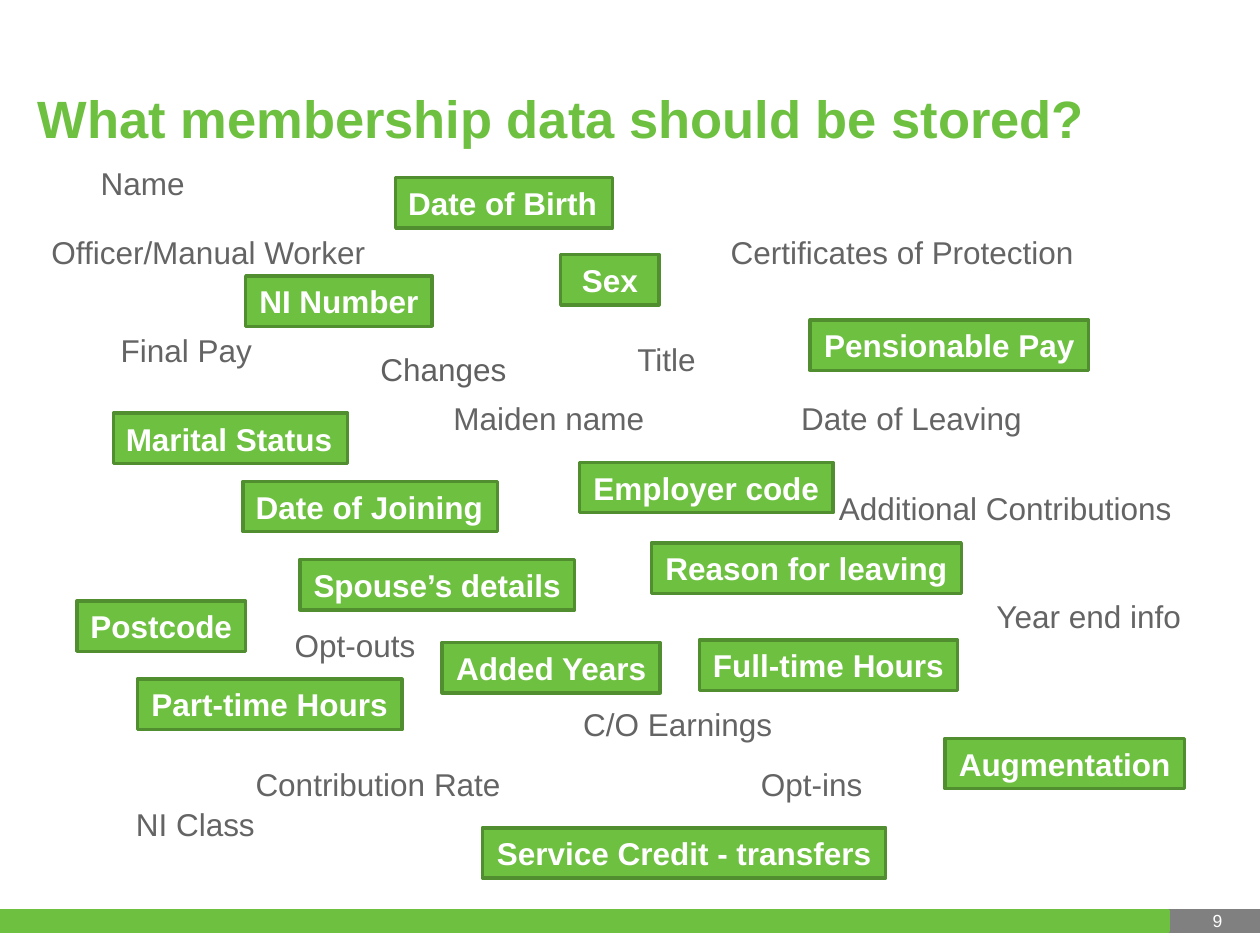
from pptx import Presentation
from pptx.dml.color import RGBColor
from pptx.enum import shapes, text
from pptx.util import Inches, Pt

GREEN, DARK_GREEN, GREY, BAR_GREY, WHITE = "6EC040", "518E2F", "646464", "808080", "FFFFFF"
CHANGES_GREY = "606060"
ROW_HEIGHT = 0.4
LEFT, CENTER, RIGHT = text.PP_ALIGN.LEFT, text.PP_ALIGN.CENTER, text.PP_ALIGN.RIGHT

PLAIN_ITEMS = [
    ("Name", 0.7, 1.25, 0.88),
    ("Officer/Manual Worker", 0.31, 1.8, 2.72),
    ("Certificates of Protection", 5.7, 1.8, 2.95),
    ("Final Pay", 0.86, 2.58, 1.25),
    ("Title", 4.96, 2.65, 0.67),
    ("Changes", 2.92, 2.73, 1.21),
    ("Maiden name", 3.5, 3.12, 1.73),
    ("Date of Leaving", 6.26, 3.12, 1.97),
    ("Additional Contributions", 6.56, 3.83, 3.05),
    ("Year end info", 7.81, 4.69, 1.68),
    ("Opt-outs", 2.24, 4.92, 1.17),
    ("C/O Earnings", 4.53, 5.55, 1.72),
    ("Contribution Rate", 1.93, 6.02, 2.16),
    ("Opt-ins", 5.94, 6.02, 1.02),
    ("NI Class", 0.98, 6.34, 1.16),
]
HIGHLIGHTED_ITEMS = [
    ("Date of Birth", 3.14, 1.41, 1.72),
    ("Sex", 4.45, 2.02, 0.78),
    ("NI Number", 1.95, 2.19, 1.48),
    ("Pensionable Pay", 6.43, 2.54, 2.21),
    ("Marital Status", 0.9, 3.28, 1.86),
    ("Employer code", 4.6, 3.67, 2.01),
    ("Date of Joining", 1.93, 3.82, 2.02),
    ("Reason for leaving", 5.17, 4.31, 2.46),
    ("Spouse’s details", 2.38, 4.44, 2.18),
    ("Postcode", 0.61, 4.77, 1.34),
    ("Full-time Hours", 5.55, 5.08, 2.05),
    ("Added Years", 3.51, 5.1, 1.73),
    ("Part-time Hours", 1.09, 5.39, 2.1),
    ("Augmentation", 7.5, 5.86, 1.9),
    ("Service Credit - transfers", 3.83, 6.57, 3.2),
]
LEFT_ALIGNED = {"Date of Birth", "Date of Joining", "Marital Status"}
WRAPPED = {"Sex", "Additional Contributions"}


def rgb(value):
    """Turn a hex string into a colour."""
    return RGBColor.from_string(value)


def inches(*box):
    """Turn box numbers into lengths."""
    return [Inches(length) for length in box]


def write(shape, wording, size, color, bold=False, align=LEFT):
    """Put one formatted paragraph into a shape."""
    paragraph = shape.text_frame.paragraphs[0]
    paragraph.text = wording
    paragraph.alignment = align
    font = paragraph.font
    font.name, font.size, font.bold = "Arial", Pt(size), bold
    font.color.rgb = rgb(color)


def add_bar(slide, box, fill, line):
    """Draw a flat outlined rectangle."""
    bar = slide.shapes.add_shape(shapes.MSO_SHAPE.RECTANGLE, *inches(*box))
    bar.shadow.inherit = False
    bar.fill.solid()
    bar.fill.fore_color.rgb = rgb(fill)
    bar.line.color.rgb = rgb(line)
    bar.line.width = Pt(2)
    return bar


def add_footer(slide, left, top, width, height):
    """Draw the footer band with the slide number."""
    number_width = 0.83
    add_bar(slide, (left + width - number_width, top, number_width, height), BAR_GREY, BAR_GREY)
    add_bar(slide, (left, top, width - 0.73, height), GREEN, GREEN)
    number = slide.shapes.add_textbox(*inches(left + width - 0.84, top - 0.38, 0.64, 0.59))
    number.text_frame.word_wrap = True
    number.text_frame.vertical_anchor = text.MSO_ANCHOR.BOTTOM
    write(number, "9", 10, WHITE, align=RIGHT)


def add_title(slide, left, top, width, height):
    """Place the slide title."""
    title = slide.shapes.title
    title.left, title.top, title.width, title.height = inches(left, top, width, height)
    title.text_frame.vertical_anchor = text.MSO_ANCHOR.TOP
    title.text_frame.auto_size = text.MSO_AUTO_SIZE.SHAPE_TO_FIT_TEXT
    write(title, "What membership data should be stored?", 30, GREEN, bold=True)


def add_item(slide, wording, left, top, width, highlighted):
    """Place one data item, boxed in green when highlighted."""
    box = (left, top, width, ROW_HEIGHT)
    if highlighted:
        item = add_bar(slide, box, GREEN, DARK_GREEN)
        align = LEFT if wording in LEFT_ALIGNED else CENTER
        color = WHITE
    else:
        item = slide.shapes.add_textbox(*inches(*box))
        align = LEFT
        color = CHANGES_GREY if wording == "Changes" else GREY
    item.text_frame.word_wrap = wording in WRAPPED
    item.text_frame.auto_size = text.MSO_AUTO_SIZE.SHAPE_TO_FIT_TEXT
    write(item, wording, 18, color, highlighted, align)


def main():
    """Build and save the slide."""
    deck = Presentation()
    deck.slide_width, deck.slide_height = inches(10, 7.5)
    slide = deck.slides.add_slide(deck.slide_layouts[5])
    add_footer(slide, 0, 7.23, 10, 0.16)
    add_title(slide, 0.2, 0.63, 8.93, 0.61)
    for items, highlighted in ((PLAIN_ITEMS, False), (HIGHLIGHTED_ITEMS, True)):
        for item in items:
            add_item(slide, *item, highlighted)
    deck.save("out.pptx")


if __name__ == "__main__":
    main()
